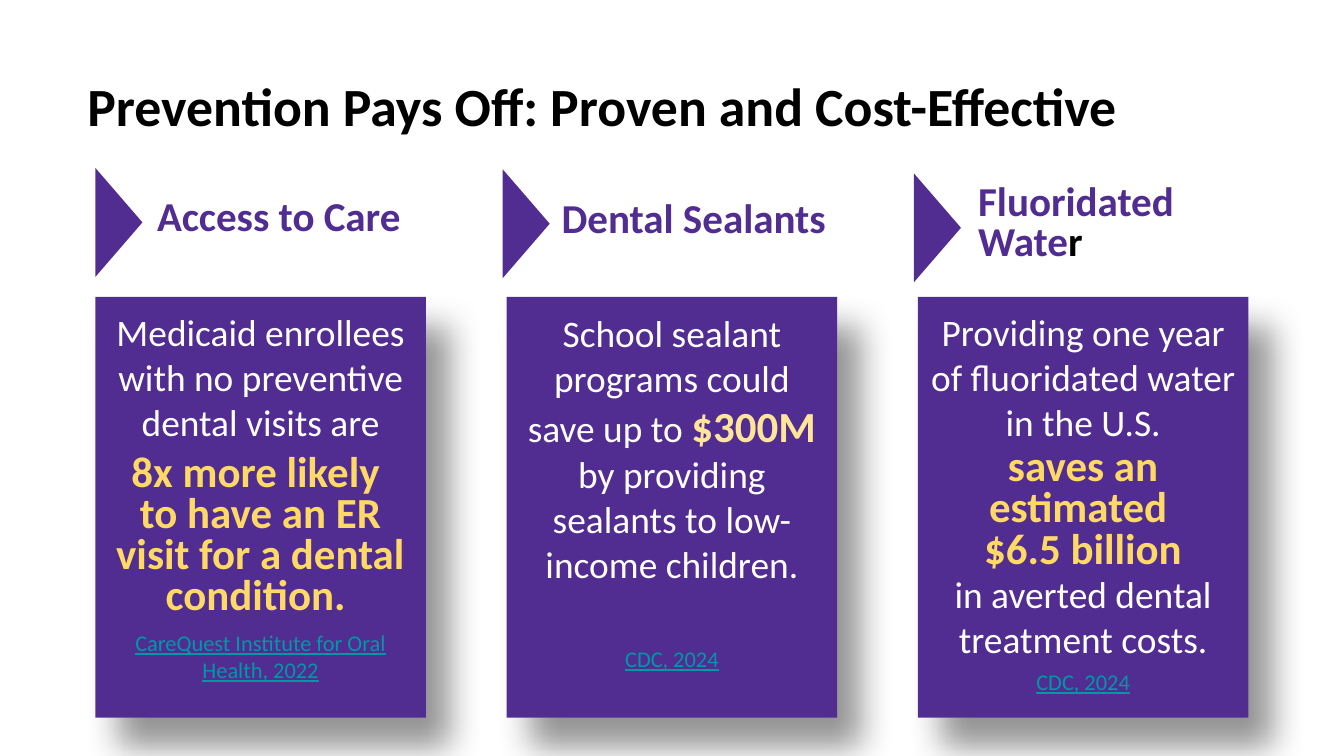
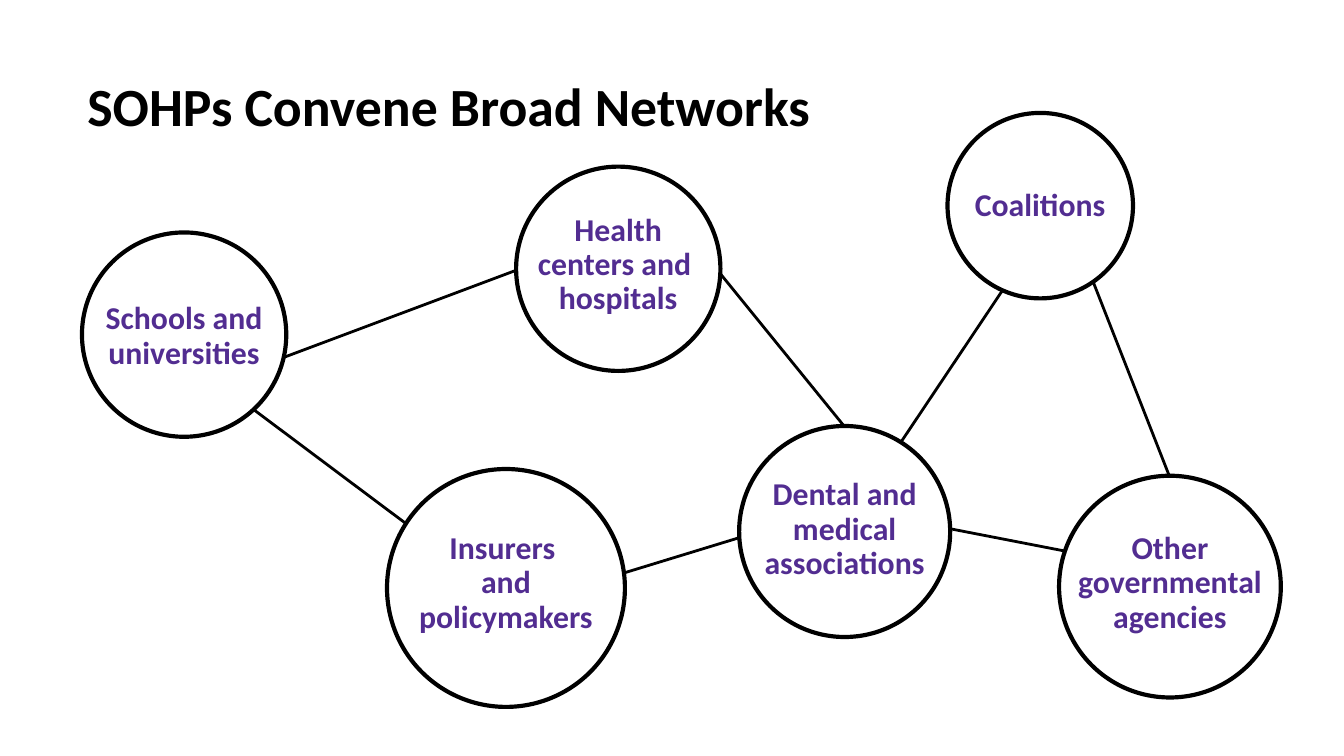
"""Builds two slides on dental prevention savings and oral health partner networks."""
from dataclasses import dataclass, replace

from lxml.etree import SubElement
from pptx import Presentation
from pptx.dml.color import RGBColor
from pptx.enum.shapes import MSO_CONNECTOR as Connector, MSO_SHAPE as Shape
from pptx.enum.text import MSO_ANCHOR as Anchor, MSO_AUTO_SIZE as AutoSize, PP_ALIGN as Align
from pptx.oxml.ns import qn
from pptx.util import Inches, Pt


@dataclass(frozen=True)
class TextStyle:
    size: float
    color: str
    bold: bool = False
    underline: bool = False
    align: Align = Align.CENTER
    spacing: float = 1.0
    after: float = 0


@dataclass(frozen=True)
class Theme:
    font: str = "Calibri"
    purple: str = "522D91"
    black: str = "000000"
    white: str = "FFFFFF"
    title: TextStyle = TextStyle(28.8, "000000", True, align=Align.LEFT)
    heading: TextStyle = TextStyle(22, "522D91", True, align=Align.LEFT, spacing=0.8)
    body: TextStyle = TextStyle(20, "FFFFFF", after=8)
    claim: TextStyle = TextStyle(23, "FFD966", True, spacing=0.8, after=8)
    amount: TextStyle = TextStyle(23, "FFE599", True)
    source: TextStyle = TextStyle(12, "0097A7", underline=True, after=10)
    partner: TextStyle = TextStyle(17, "522D91", True, spacing=0.9)
    link_width: float = 1.5
    circle_width: float = 2.25


class Deck:
    def __init__(self, theme):
        self.theme = theme
        self.presentation = Presentation()
        self.presentation.slide_width = Inches(10)
        self.presentation.slide_height = Inches(5.625)
        self.slide = None

    def add_slide(self, title):
        self.slide = self.presentation.slides.add_slide(self.presentation.slide_layouts[5])
        shape = self.slide.shapes.title
        shape.left, shape.top, shape.width, shape.height = map(Inches, (0.55, 0.44, 8.9, 0.63))
        self.fill_frame(shape.text_frame, [title], self.theme.title)

    def set_font(self, font, style):
        font.name = self.theme.font
        font.size = Pt(style.size)
        font.bold = style.bold
        font.underline = style.underline
        font.color.rgb = RGBColor.from_string(style.color)

    def fill_frame(self, frame, paragraphs, style):
        frame.word_wrap = True
        frame.auto_size = AutoSize.NONE
        frame.vertical_anchor = Anchor.TOP
        frame.margin_left = frame.margin_right = Inches(0.1)
        frame.margin_top = frame.margin_bottom = Inches(0.1)
        for index, content in enumerate(paragraphs):
            paragraph = frame.add_paragraph() if index else frame.paragraphs[0]
            paragraph.alignment = style.align
            paragraph.line_spacing = style.spacing
            paragraph.space_before = Pt(0)
            paragraph.space_after = Pt(style.after)
            if isinstance(content, str):
                paragraph.text = content.replace("\n", "\v")
                self.set_font(paragraph.font, style)
                continue
            for words, run_style in content:
                run = paragraph.add_run()
                run.text = words
                self.set_font(run.font, run_style)

    def text(self, left, top, width, height, paragraphs, style):
        box = self.slide.shapes.add_textbox(*map(Inches, (left, top, width, height)))
        self.fill_frame(box.text_frame, paragraphs, style)

    def shape(self, kind, left, top, width, height, fill, outline=None):
        shape = self.slide.shapes.add_shape(kind, *map(Inches, (left, top, width, height)))
        shape.shadow.inherit = False
        shape.fill.solid()
        shape.fill.fore_color.rgb = RGBColor.from_string(fill)
        if outline:
            shape.line.color.rgb = RGBColor.from_string(outline)
            shape.line.width = Pt(self.theme.circle_width)
        else:
            shape.line.fill.background()
        return shape

    def panel(self, left, top, width, height):
        panel = self.shape(Shape.RECTANGLE, left, top, width, height, self.theme.purple)
        effects = panel.element.spPr.find(qn("a:effectLst"))
        shadow = SubElement(effects, qn("a:outerShdw"), blurRad=str(Pt(18)), dist=str(Pt(20.08)),
                            dir=str(52 * 60000), algn="bl", rotWithShape="0")
        color = SubElement(shadow, qn("a:srgbClr"), val=self.theme.black)
        SubElement(color, qn("a:alpha"), val="42000")

    def pointer(self, left, top):
        pointer = self.shape(Shape.ISOSCELES_TRIANGLE, left, top, 0.81, 0.35, self.theme.purple)
        pointer.rotation = 90

    def circle(self, left, top, diameter):
        self.shape(Shape.OVAL, left, top, diameter, diameter, self.theme.white, self.theme.black)

    def link(self, start, end):
        link = self.slide.shapes.add_connector(Connector.STRAIGHT, *map(Inches, (*start, *end)))
        link.line.color.rgb = RGBColor.from_string(self.theme.black)
        link.line.width = Pt(self.theme.link_width)
        SubElement(link.element.spPr, qn("a:effectLst"))


def build_prevention(deck):
    theme = deck.theme
    deck.add_slide("Prevention Pays Off: Proven and Cost-Effective")
    panel_width = 2.46
    panel_lefts = [0.71 + 3.06 * column for column in range(3)]
    fluoridated = [("Fluoridated Wate", theme.heading),
                   ("r", replace(theme.heading, color=theme.black))]
    sealants = [("School sealant programs could save up to ", theme.body),
                ("$300M ", theme.amount),
                ("by providing sealants to low-income children.", theme.body)]
    panel_texts = [
        [(2.2, 1.21, "Medicaid enrollees with no preventive dental visits are", theme.body),
         (3.28, 1.44, "8x more likely \nto have an ER visit for a dental condition. ", theme.claim),
         (4.58, 0.71, "CareQuest Institute for Oral Health, 2022", theme.source)],
        [(2.21, 1.25, sealants, theme.body),
         (4.7, 0.51, "CDC, 2024", theme.source)],
        [(2.2, 1.21, "Providing one year of fluoridated water in the U.S.", theme.body),
         (3.24, 1.13, "saves an estimated \n$6.5 billion", theme.claim),
         (4.15, 0.88, "in averted dental treatment costs.", theme.body),
         (4.87, 0.51, "CDC, 2024", theme.source)],
    ]
    for left, texts in zip(panel_lefts, panel_texts):
        deck.panel(left, 2.21, panel_width, 3.13)
        for top, height, content, style in texts:
            deck.text(left, top, panel_width, height, [content], style)

    headings = [
        (1.07, 1.39, 2.09, 0.5, "Access to Care"),
        (4.08, 1.4, 2.39, 0.5, "Dental Sealants"),
        (7.18, 1.28, 2.39, 0.79, fluoridated),
    ]
    for left, top, width, height, content in headings:
        deck.text(left, top, width, height, [content], theme.heading)
    for left, top in [(0.48, 1.48), (3.51, 1.49), (6.57, 1.52)]:
        deck.pointer(left, top)


def build_network(deck):
    deck.add_slide("SOHPs Convene Broad Networks")
    links = [
        ((6.84, 3.89), (8.18, 4.15)),
        ((8.08, 1.96), (8.7, 3.54)),
        ((7.56, 2.01), (6.59, 3.46)),
        ((1.81, 2.99), (3.16, 4)),
        ((6.28, 3.17), (5.33, 2)),
        ((4.36, 4.35), (5.7, 3.94)),
        ((3.87, 2), (2.11, 2.66)),
    ]
    for start, end in links:
        deck.link(start, end)

    partners = [
        (2.88, 3.49, 1.77, 3.86, 1.57, ["Insurers \nand policymakers"]),
        (5.5, 3.17, 1.57, 3.46, 1.46, ["Dental and medical associations"]),
        (3.84, 1.24, 1.52, 1.49, 1.46, ["Health centers and ", "hospitals"]),
        (0.61, 1.73, 1.52, 2.15, 1.46, ["Schools and universities"]),
        (7.88, 3.54, 1.65, 3.86, 1.57, ["Other governmental agencies"]),
        (7.05, 0.84, 1.38, 1.31, 1.46, ["Coalitions"]),
    ]
    for left, top, diameter, label_top, label_width, label in partners:
        deck.circle(left, top, diameter)
        label_left = left + (diameter - label_width) / 2
        deck.text(label_left, label_top, label_width, 1.02, label, deck.theme.partner)


def main():
    deck = Deck(Theme())
    build_prevention(deck)
    build_network(deck)
    deck.presentation.save("out.pptx")


if __name__ == "__main__":
    main()
